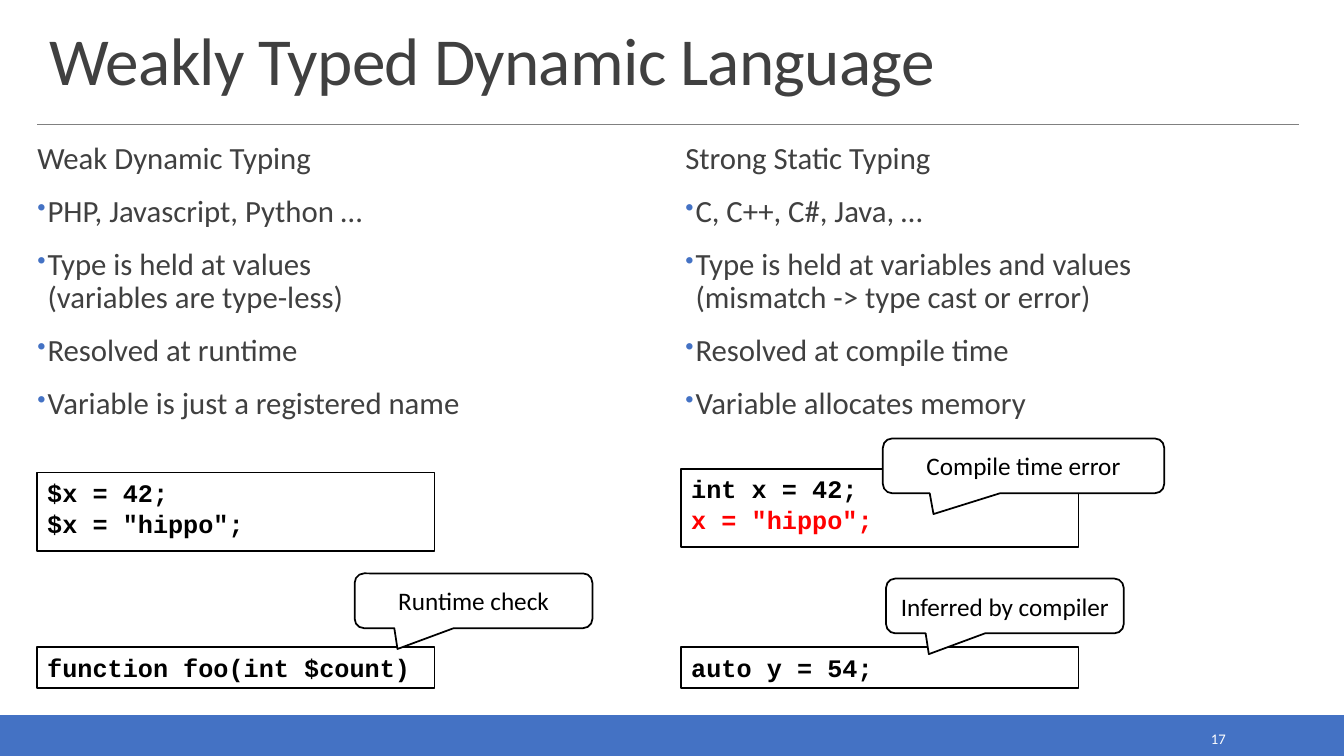
"""Build a slide comparing weak dynamic typing with strong static typing."""
from lxml import etree
from pptx import Presentation
from pptx import util as u
from pptx.dml.color import RGBColor
from pptx.enum import shapes, text
from pptx.oxml.ns import qn

COLORS = {
    "accent": "4472C4",
    "body": "404040",
    "rule": "808080",
    "ink": "000000",
    "error": "FF0000",
    "paper": "FFFFFF",
}
SANS, MONO = "Calibri", "Courier New"
LEFT_CODE, RIGHT_CODE = 0.94, 17.17

WEAK_POINTS = [
    "PHP, Javascript, Python …",
    "Type is held at values\v(variables are type-less)",
    "Resolved at runtime",
    "Variable is just a registered name",
]
STRONG_POINTS = [
    "C, C++, C#, Java, …",
    "Type is held at variables and values\v(mismatch -> type cast or error)",
    "Resolved at compile time",
    "Variable allocates memory",
]


def color(name):
    return RGBColor.from_string(COLORS[name])


def box(left, top, width, height):
    return u.Cm(left), u.Cm(top), u.Cm(width), u.Cm(height)


def style(paragraph, size, color_name, face=SANS, bold=False, align=text.PP_ALIGN.LEFT):
    paragraph.alignment = align
    paragraph.font.name = face
    paragraph.font.size = u.Pt(size)
    paragraph.font.bold = bold
    paragraph.font.color.rgb = color(color_name)


def add_bullet(paragraph):
    properties = paragraph._p.get_or_add_pPr()
    indent = u.Cm(0.26)
    properties.set("marL", str(indent))
    properties.set("indent", str(-indent))
    bullet_color = etree.SubElement(properties, qn("a:buClr"))
    etree.SubElement(bullet_color, qn("a:srgbClr"), val=COLORS["accent"])
    etree.SubElement(properties, qn("a:buSzPct"), val="80000")
    etree.SubElement(properties, qn("a:buChar"), char="•")


def add_block(slide, preset, bounds, fill=None, outline="ink"):
    block = slide.shapes.add_shape(preset, *box(*bounds))
    block.shadow.inherit = False
    if fill:
        block.fill.solid()
        block.fill.fore_color.rgb = color(fill)
    else:
        block.fill.background()
    block.line.color.rgb = color(outline)
    block.line.width = u.Pt(1.25)
    return block


def add_rule(slide, left, right, top):
    rule = slide.shapes.add_connector(
        shapes.MSO_CONNECTOR.STRAIGHT, u.Cm(left), u.Cm(top), u.Cm(right), u.Cm(top))
    rule.line.color.rgb = color("rule")
    rule.line.width = u.Pt(0.5)
    etree.SubElement(rule._element.spPr, qn("a:effectLst"))


def set_title(slide, words):
    title = slide.shapes.title
    title.left, title.top, title.width, title.height = box(0.99, 0.51, 31.8, 2.13)
    frame = title.text_frame
    frame.text = words
    frame.vertical_anchor = text.MSO_ANCHOR.BOTTOM
    frame.auto_size = text.MSO_AUTO_SIZE.NONE
    heading = frame.paragraphs[0]
    style(heading, 48, "body")
    heading.line_spacing = 0.85
    heading._p.pPr.find(qn("a:defRPr")).set("spc", "-50")


def add_column(slide, left, width, heading, points):
    frame = slide.shapes.add_textbox(*box(left, 3.5, width, 7.42)).text_frame
    frame.word_wrap = True
    frame.margin_left = frame.margin_right = 0
    frame.margin_top = frame.margin_bottom = u.Cm(0.1)
    frame.text = "\n".join([heading, *points])
    for index, paragraph in enumerate(frame.paragraphs):
        if index:
            add_bullet(paragraph)
        style(paragraph, 22, "body")
        paragraph.line_spacing = 0.9
        paragraph.space_before = u.Pt(12)
        paragraph.space_after = u.Pt(2)


def add_code(slide, left, top, height, *lines):
    code = add_block(slide, shapes.MSO_SHAPE.RECTANGLE, (left, top, 10.01, height))
    frame = code.text_frame
    frame.vertical_anchor = text.MSO_ANCHOR.TOP
    frame.text = "\n".join(words for words, _ in lines)
    for paragraph, (_, color_name) in zip(frame.paragraphs, lines):
        style(paragraph, 18, color_name, MONO, bold=True)


def add_callout(slide, left, top, width, words):
    callout = add_block(slide, shapes.MSO_SHAPE.ROUNDED_RECTANGULAR_CALLOUT,
                        (left, top, width, 1.38), fill="paper")
    callout.adjustments[0] = -0.32
    callout.adjustments[1] = 0.88
    callout.adjustments[2] = 0.17
    frame = callout.text_frame
    frame.text = words
    frame.vertical_anchor = text.MSO_ANCHOR.MIDDLE
    style(frame.paragraphs[0], 18, "ink", align=text.PP_ALIGN.CENTER)


def add_footer(slide, number):
    add_block(slide, shapes.MSO_SHAPE.RECTANGLE, (0, 18.03, 33.87, 1.02),
              fill="accent", outline="accent")
    frame = slide.shapes.add_textbox(*box(27.51, 18.26, 3.63, 0.71)).text_frame
    frame.word_wrap = True
    frame.vertical_anchor = text.MSO_ANCHOR.MIDDLE
    frame.text = number
    style(frame.paragraphs[0], 10.5, "paper", align=text.PP_ALIGN.RIGHT)


def main():
    deck = Presentation()
    deck.slide_width, deck.slide_height = u.Cm(33.87), u.Cm(19.05)
    slide = deck.slides.add_slide(deck.slide_layouts[5])

    set_title(slide, "Weakly Typed Dynamic Language")
    add_footer(slide, "17")
    add_rule(slide, 0.94, 32.74, 3.13)
    add_column(slide, 0.94, 15.82, "Weak Dynamic Typing", WEAK_POINTS)
    add_column(slide, 17.27, 15.47, "Strong Static Typing", STRONG_POINTS)

    add_code(slide, LEFT_CODE, 11.91, 1.98, ("$x = 42;", "ink"), ('$x = "hippo";', "ink"))
    add_code(slide, RIGHT_CODE, 11.81, 1.98, ("int x = 42;", "ink"), ('x = "hippo";', "error"))
    add_code(slide, LEFT_CODE, 16.31, 1.02, ("function foo(int $count)", "ink"))
    add_code(slide, RIGHT_CODE, 16.31, 1.02, ("auto y = 54;", "ink"))

    add_callout(slide, 8.94, 14.45, 5.99, "Runtime check")
    add_callout(slide, 22.33, 14.58, 5.99, "Inferred by compiler")
    add_callout(slide, 22.25, 11.05, 7.09, "Compile time error")

    deck.save("out.pptx")


if __name__ == "__main__":
    main()
